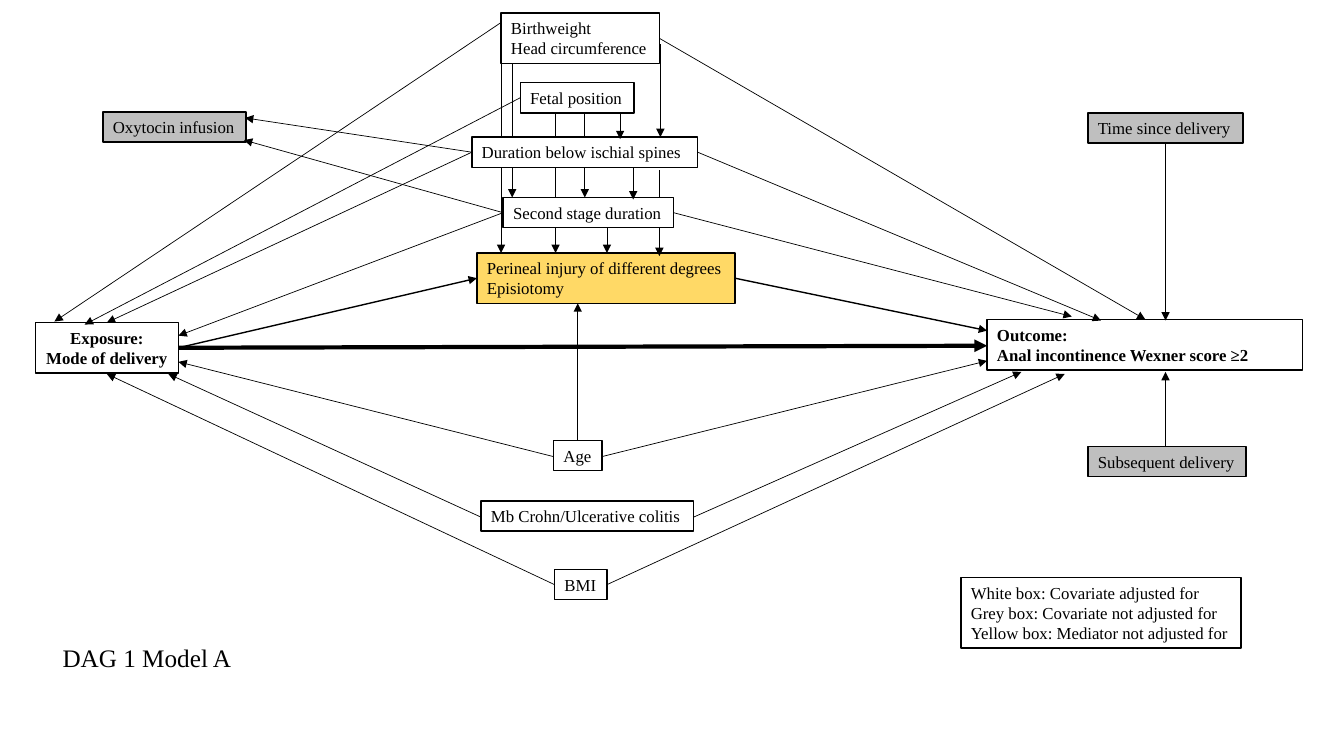
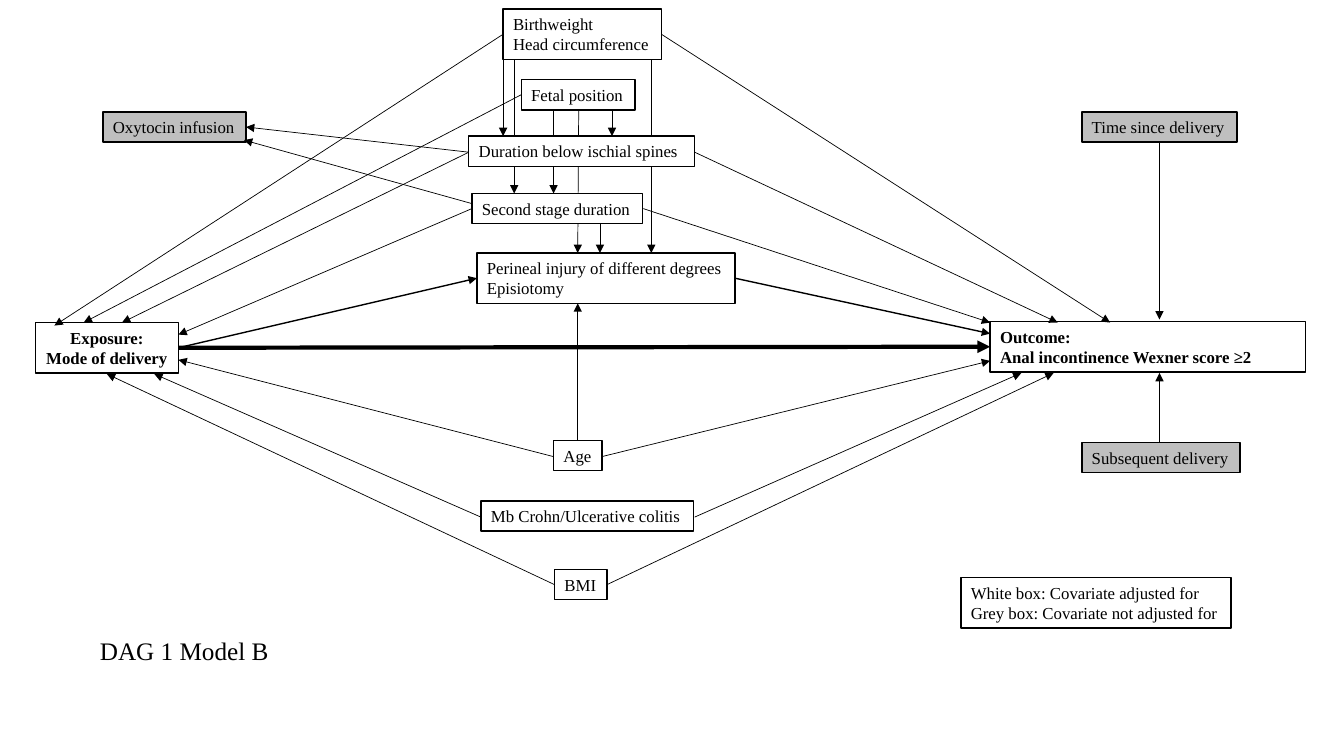
from dataclasses import dataclass
from typing import Any

from lxml.etree import SubElement
from pptx import Presentation
from pptx.dml.color import RGBColor
from pptx.enum.shapes import MSO_CONNECTOR
from pptx.enum.text import MSO_ANCHOR, MSO_AUTO_SIZE, PP_ALIGN
from pptx.oxml.ns import qn
from pptx.util import Inches, Pt

COLORS = {"ink": "000000", "white": "FFFFFF", "grey": "BFBFBF", "yellow": "FFD966"}
FACE = "Times New Roman"
FRAME = {
    "auto_size": MSO_AUTO_SIZE.SHAPE_TO_FIT_TEXT,
    "vertical_anchor": MSO_ANCHOR.TOP,
    "margin_left": Inches(0.1),
    "margin_right": Inches(0.1),
    "margin_top": Inches(0.05),
    "margin_bottom": Inches(0.05),
}
ROW = 0.3


@dataclass(frozen=True)
class Box:
    text: str
    left: float
    top: float
    width: float
    height: float = ROW
    fill: str | None = "white"
    bold: bool = False
    align: Any = PP_ALIGN.LEFT
    wrap: bool = False


@dataclass(frozen=True)
class Arrow:
    x1: float
    y1: float
    x2: float
    y2: float
    weight: float = 0.5


Item = Box | Arrow


@dataclass(frozen=True)
class Model:
    title: str
    left: float
    top: float
    back: list[Item]
    front: list[Item]


def color(name: str) -> RGBColor:
    return RGBColor.from_string(COLORS[name])


def apply(target: Any, values: dict[str, Any]) -> None:
    for name, value in values.items():
        setattr(target, name, value)


def place(shape: Any, left: float, top: float, width: float, height: float) -> None:
    spots = {"left": left, "top": top, "width": width, "height": height}
    apply(shape, {name: Inches(value) for name, value in spots.items()})


def write(shape: Any, text: str, size: float, bold: bool, align: Any, wrap: bool) -> None:
    frame = shape.text_frame
    frame.text = text
    apply(frame, FRAME | {"word_wrap": wrap})
    for para in frame.paragraphs:
        para.alignment = align
        for run in para.runs:
            apply(run.font, {"name": FACE, "size": Pt(size), "bold": bold})
            run.font.color.rgb = color("ink")


def draw_box(slide: Any, box: Box) -> None:
    sides = (box.left, box.top, box.width, box.height)
    shape = slide.shapes.add_textbox(*map(Inches, sides))
    write(shape, box.text, 12, box.bold, box.align, box.wrap)
    if box.fill:
        shape.fill.solid()
        shape.fill.fore_color.rgb = color(box.fill)
    shape.line.color.rgb = color("ink")
    shape.line.width = Pt(1)


def draw_arrow(slide: Any, arrow: Arrow) -> None:
    ends = (arrow.x1, arrow.y1, arrow.x2, arrow.y2)
    shape = slide.shapes.add_connector(MSO_CONNECTOR.STRAIGHT, *map(Inches, ends))
    shape.line.color.rgb = color("ink")
    shape.line.width = Pt(arrow.weight)
    props = shape.element.spPr
    SubElement(props.find(qn("a:ln")), qn("a:tailEnd"), type="triangle")
    SubElement(props, qn("a:effectLst"))


def drop(x: float, top: float, end: float) -> Arrow:
    return Arrow(x, top, x, end)


def birth(left: float, top: float) -> Box:
    return Box("Birthweight\nHead circumference", left, top, 1.57, 0.5)


def spines(left: float, top: float) -> Box:
    return Box("Duration below ischial spines", left, top, 2.24)


def fetal(left: float, top: float) -> Box:
    return Box("Fetal position", left, top, 1.13)


def stage(left: float, top: float) -> Box:
    return Box("Second stage duration", left, top, 1.69)


def injure(fill: str) -> Box:
    return Box("Perineal injury of different degrees\nEpisiotomy", 4.73, 2.51, 2.56, 0.5, fill)


def outcome(left: float, top: float, hit: float, side: float) -> list[Item]:
    text = "Outcome:\nAnal incontinence Wexner score ≥2"
    return [
        Box(text, left, top, 3.13, 0.5, None, True, wrap=True),
        Arrow(1.77, 3.45, left, hit, 3),
        Arrow(7.29, 2.76, left, side, 1),
        Arrow(5.97, 4.53, left, 3.58),
    ]


def timing(left: float, top: float, next_top: float, over: float, under: float) -> list[Item]:
    mid = left + 0.77
    return [
        Box("Time since delivery", left, top, 1.54, fill="grey"),
        drop(mid, top + ROW, over),
        Box("Subsequent delivery", left, next_top, 1.57, fill="grey"),
        drop(mid, next_top, under),
    ]


def legend(width: float, *lines: str) -> Box:
    return Box("\n".join(lines), 9.53, 5.73, width, 0.1 + 0.2 * len(lines))


SHARED: list[Item] = [
    Box("Exposure:\nMode of delivery", 0.35, 3.2, 1.42, 0.5, None, True, PP_ALIGN.CENTER),
    Box("Oxytocin infusion", 1.02, 1.11, 1.42, fill="grey"),
    Box("Mb Crohn/Ulcerative colitis", 4.77, 4.97, 2.11),
    Box("BMI", 5.5, 5.65, 0.52),
    Box("Age", 5.49, 4.37, 0.48),
    Arrow(1.77, 3.45, 4.73, 2.76, 1),
    Arrow(5.73, 4.37, 5.73, 3.01, 1),
    Arrow(5.5, 5.8, 1.06, 3.71),
]
KEYS = ["White box: Covariate adjusted for", "Grey box: Covariate not adjusted for"]

MODELS = [
    Model(
        "DAG 1 Model A", 0.52, 6.32,
        [
            drop(5.08, 0.63, 1.96),
            drop(4.97, 0.49, 2.51),
            drop(5.8, 1.04, 1.96),
            drop(5.51, 1.12, 2.51),
        ],
        [
            *outcome(9.79, 3.17, 3.43, 3.28),
            birth(4.97, 0.13),
            spines(4.68, 1.36),
            fetal(5.16, 0.82),
            injure("yellow"),
            *timing(10.79, 1.12, 4.43, 3.18, 3.69),
            Arrow(4.68, 1.51, 1.06, 3.2),
            Arrow(6.92, 1.51, 10.92, 3.18),
            Arrow(5.16, 0.97, 0.84, 3.22),
            Arrow(5.49, 4.53, 1.77, 3.59),
            Arrow(6.88, 5.13, 10.13, 3.69),
            Arrow(4.77, 5.13, 1.67, 3.71),
            Arrow(6.02, 5.8, 10.56, 3.71),
            Arrow(6.54, 0.38, 11.36, 3.17),
            Arrow(4.96, 0.23, 0.54, 3.19),
            drop(6.54, 1.69, 2.54),
            stage(4.99, 1.96),
            Arrow(4.99, 2.11, 1.77, 3.33),
            Arrow(6.68, 2.11, 10.63, 3.14),
            drop(6.55, 0.44, 1.36),
            drop(6.28, 1.67, 1.98),
            Arrow(4.68, 1.51, 2.43, 1.17),
            Arrow(4.99, 2.11, 2.42, 1.39),
            drop(6.15, 1.12, 1.38),
            drop(6.02, 2.26, 2.51),
            legend(2.78, *KEYS, "Yellow box: Mediator not adjusted for"),
        ],
    ),
    Model(
        "DAG 1 Model B", 0.89, 6.25,
        [
            drop(5.1, 0.6, 1.92),
            drop(6.46, 0.6, 2.51),
            drop(5.49, 1.09, 1.92),
            Arrow(5.74, 1.09, 5.73, 2.51),
        ],
        [
            *outcome(9.82, 3.19, 3.44, 3.31),
            birth(4.99, 0.09),
            spines(4.65, 1.35),
            fetal(5.17, 0.79),
            injure("white"),
            *timing(10.73, 1.11, 4.39, 3.17, 3.7),
            Arrow(4.65, 1.51, 1.21, 3.2),
            Arrow(6.89, 1.51, 10.49, 3.2),
            Arrow(5.17, 0.94, 0.83, 3.2),
            Arrow(5.49, 4.53, 1.77, 3.57),
            Arrow(6.89, 5.13, 10.13, 3.7),
            Arrow(4.77, 5.13, 1.53, 3.71),
            Arrow(6.02, 5.8, 10.45, 3.7),
            Arrow(6.56, 0.34, 11.01, 3.2),
            Arrow(4.99, 0.34, 0.54, 3.23),
            stage(4.68, 1.92),
            Arrow(4.68, 2.07, 1.77, 3.32),
            Arrow(6.38, 2.07, 9.82, 3.2),
            drop(5.95, 2.21, 2.51),
            drop(4.99, 0.6, 1.35),
            Arrow(4.65, 1.51, 2.44, 1.26),
            Arrow(4.68, 2.02, 2.42, 1.39),
            drop(6.07, 1.09, 1.35),
            legend(2.68, *KEYS),
        ],
    ),
]


def build(deck: Any, model: Model) -> None:
    slide = deck.slides.add_slide(deck.slide_layouts[5])
    title = slide.shapes.title
    place(title, model.left, model.top, 1.89, 0.4)
    write(title, model.title, 18, False, PP_ALIGN.LEFT, False)
    for item in model.back + SHARED + model.front:
        if isinstance(item, Box):
            draw_box(slide, item)
        else:
            draw_arrow(slide, item)


def main() -> None:
    deck = Presentation()
    apply(deck, {"slide_width": Inches(13.33), "slide_height": Inches(7.5)})
    for model in MODELS:
        build(deck, model)
    deck.save("out.pptx")


if __name__ == "__main__":
    main()
